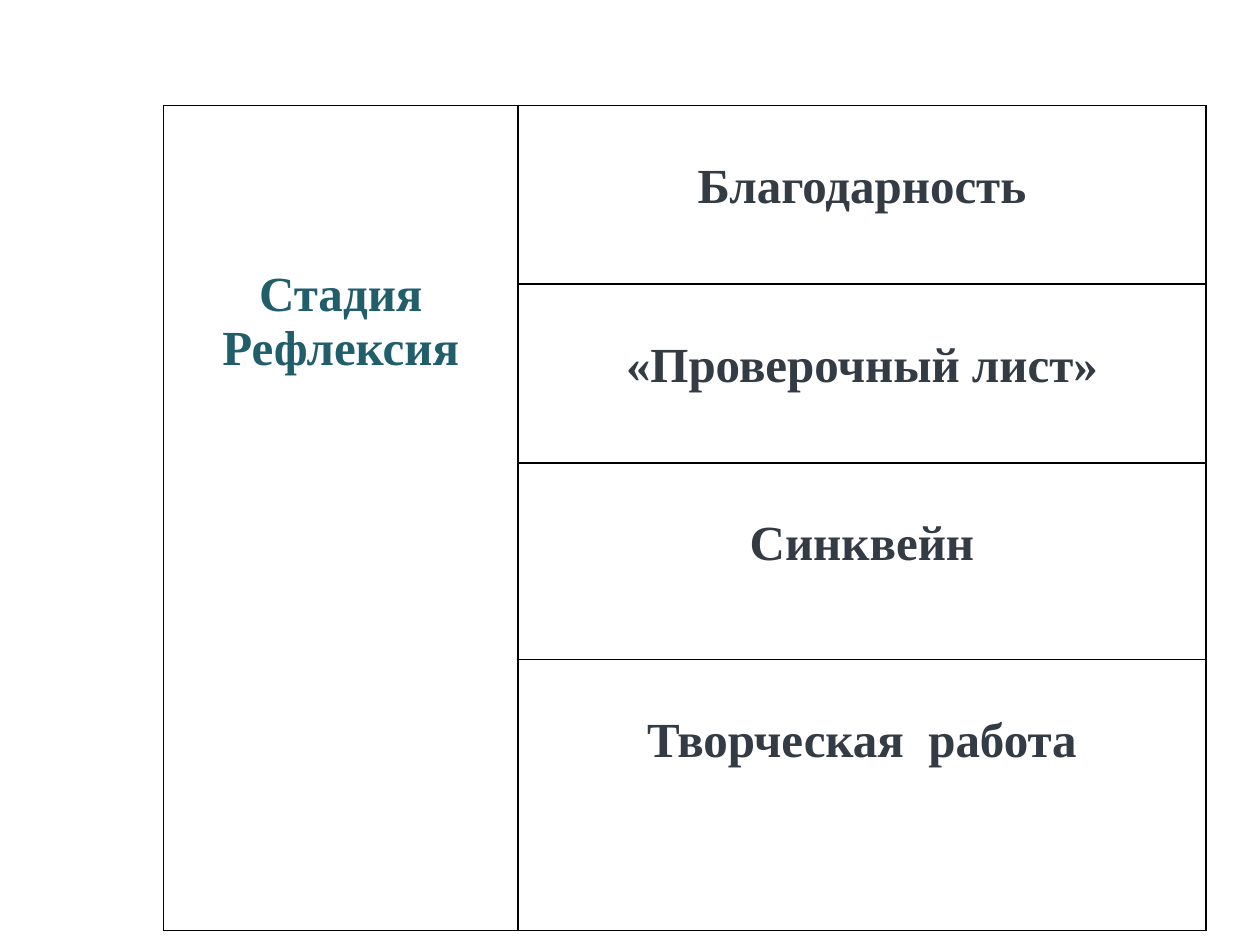
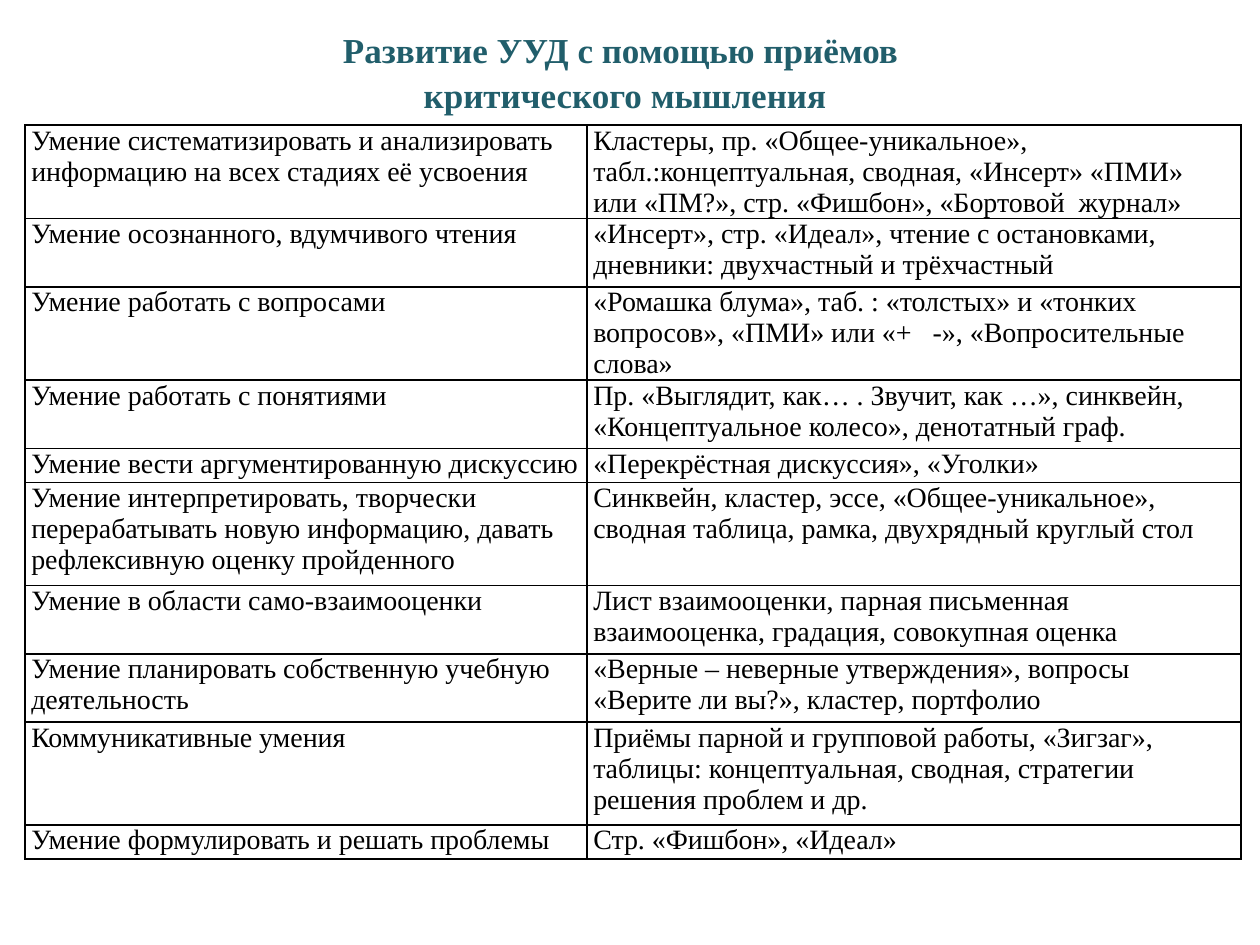
from lxml.etree import SubElement as Sub
from pptx import Presentation
from pptx.dml.color import RGBColor
from pptx.enum.text import MSO_ANCHOR as Anchor, MSO_AUTO_SIZE as Auto, PP_ALIGN as Align
from pptx.oxml.ns import qn
from pptx.util import Cm, Pt

# Content
STAGE = "Стадия Рефлексия"
TASKS = ["Благодарность", "«Проверочный лист»", "Синквейн", "Творческая  работа"]
TITLE = ["Развитие УУД с помощью приёмов ", "критического мышления"]
SKILLS = [  # lines of height, skill, methods
    (2, "Умение систематизировать и анализировать информацию на всех стадиях её усвоения",
     "Кластеры, пр. «Общее-уникальное», табл.:концептуальная, сводная, «Инсерт» «ПМИ»  "
     "или «ПМ?», стр. «Фишбон», «Бортовой  журнал»"),
    (2, "Умение осознанного, вдумчивого чтения",
     "«Инсерт», стр. «Идеал», чтение с остановками, дневники: двухчастный и трёхчастный"),
    (2, "Умение работать с вопросами",
     "«Ромашка блума», таб. : «толстых» и «тонких вопросов», «ПМИ» или «+   -», "
     "«Вопросительные слова»"),
    (2, "Умение работать с понятиями",
     "Пр. «Выглядит, как… . Звучит, как …», синквейн, «Концептуальное колесо», "
     "денотатный граф."),
    (1, "Умение вести аргументированную дискуссию", "«Перекрёстная дискуссия», «Уголки»"),
    (3, "Умение интерпретировать, творчески перерабатывать новую информацию, "
        "давать рефлексивную оценку пройденного",
     "Синквейн, кластер, эссе, «Общее-уникальное», сводная таблица, рамка, "
     "двухрядный круглый стол"),
    (2, "Умение в области само-взаимооценки",
     "Лист взаимооценки, парная письменная взаимооценка, градация, совокупная оценка"),
    (2, "Умение планировать собственную учебную деятельность",
     "«Верные – неверные утверждения», вопросы «Верите ли вы?», кластер, портфолио"),
    (3, "Коммуникативные умения",
     "Приёмы парной и групповой работы, «Зигзаг», таблицы: концептуальная, сводная, "
     "стратегии решения проблем и др."),
    (1, "Умение формулировать и решать проблемы", "Стр. «Фишбон», «Идеал»"),
]

# Shared look
TEAL = RGBColor(0x21, 0x5E, 0x6B)
SLATE = RGBColor(0x33, 0x3B, 0x44)
BLACK = RGBColor(0, 0, 0)
FACE = "Times New Roman"
HEAD = dict(name=FACE, size=Pt(20), bold=True)
LARGE = dict(name=FACE, size=Pt(28), bold=True)
BODY = dict(name=FACE, size=Pt(16), bold=False)
LINE = 1.09  # height of one large line, cm
UNIT = 0.69  # height of one body line, cm


def style(par, font, color, align):
    par.alignment = align
    for run in par.runs:
        for key, val in font.items():
            setattr(run.font, key, val)
        run.font.color.rgb = color


def border(cell):
    props = cell._tc.get_or_add_tcPr()
    for side in ("lnL", "lnR", "lnT", "lnB"):
        line = Sub(props, qn("a:" + side), w=str(Pt(1)))
        Sub(Sub(line, qn("a:solidFill")), qn("a:srgbClr"), val=str(BLACK))


def write(cell, text, font, color, align=Align.LEFT, top=0):
    cell.text = text
    cell.margin_top = Cm(top)
    style(cell.text_frame.paragraphs[0], font, color, align)


def grid(slide, left, top, cols, rows, pad):
    frame = slide.shapes.add_table(len(rows), len(cols), Cm(left), Cm(top),
                                   Cm(sum(cols)), Cm(sum(rows)))
    table = frame.table
    table.first_row = table.horz_banding = False
    for col, width in zip(table.columns, cols):
        col.width = Cm(width)
    for row, height in zip(table.rows, rows):
        row.height = Cm(height)
    for cell in table.iter_cells():
        border(cell)
        cell.fill.background()
        cell.margin_left = cell.margin_right = Cm(pad)
        cell.margin_top = cell.margin_bottom = 0
    return table


def stage(deck):
    slide = deck.slides.add_slide(deck.slide_layouts[6])
    table = grid(slide, 3.3, 2.13, [7.14, 13.87], [3.6, 3.6, 3.96, 5.47], 0.18)
    table.cell(0, 0).merge(table.cell(len(TASKS) - 1, 0))
    write(table.cell(0, 0), STAGE, LARGE, TEAL, Align.CENTER, 3 * LINE)
    for i, task in enumerate(TASKS):
        write(table.cell(i, 1), task, LARGE, SLATE, Align.CENTER, LINE)


def skills(deck):
    slide = deck.slides.add_slide(deck.slide_layouts[5])

    # Title
    title = slide.shapes.title
    place = dict(left=1.7, top=0.33, width=21.8, height=3.18)
    for key, val in place.items():
        setattr(title, key, Cm(val))
    frame = title.text_frame
    frame.text = "\n".join(TITLE)
    frame.auto_size = Auto.NONE
    frame.vertical_anchor = Anchor.TOP
    frame.margin_top = Cm(0.25)
    for par in frame.paragraphs:
        style(par, HEAD, TEAL, Align.CENTER)
    frame.paragraphs[1].space_before = Pt(1.5)

    # Skills and methods
    rows = [lines * UNIT for lines, *_ in SKILLS]
    table = grid(slide, 0.5, 2.52, [11.33, 13.19], rows, 0.13)
    for i, (_, *texts) in enumerate(SKILLS):
        for j, text in enumerate(texts):
            write(table.cell(i, j), text, BODY, BLACK)


def main():
    deck = Presentation()
    deck.slide_width, deck.slide_height = Cm(25.4), Cm(19.05)
    stage(deck)
    skills(deck)
    deck.save("out.pptx")


if __name__ == "__main__":
    main()
